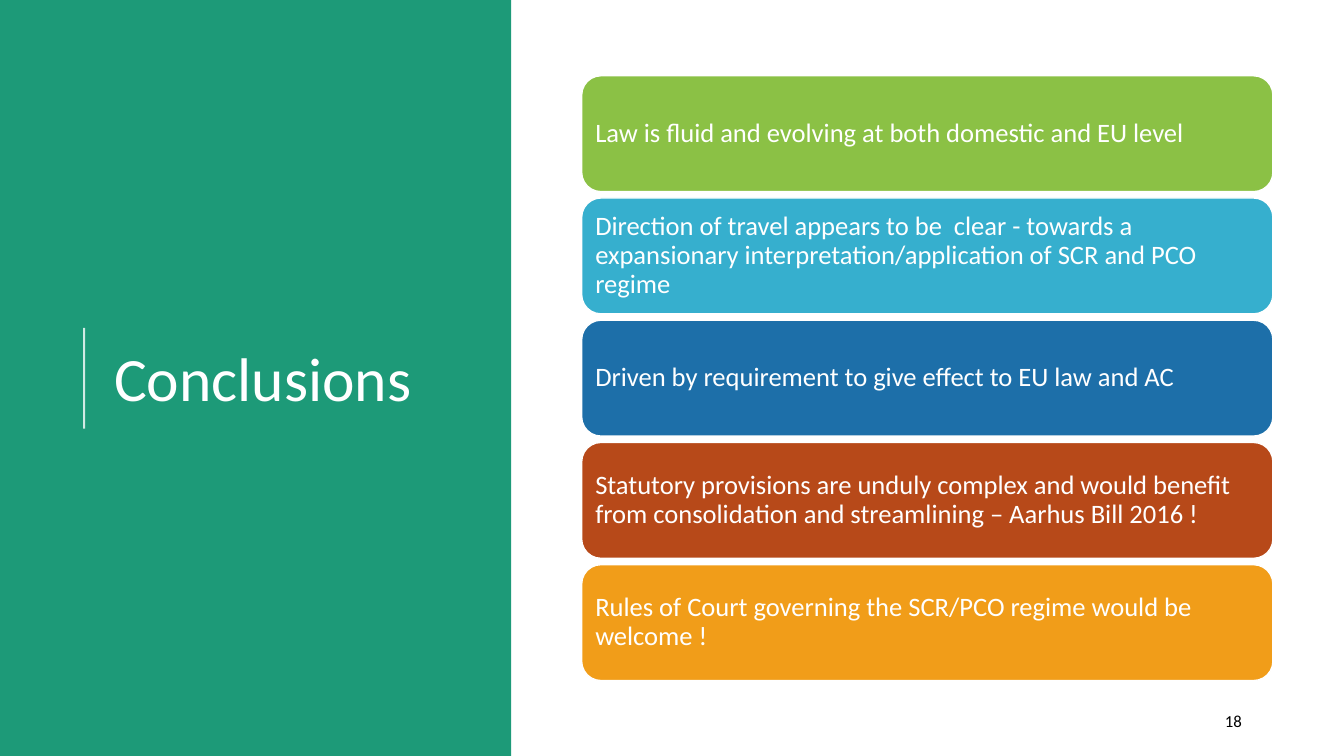
from dataclasses import dataclass

from lxml.etree import SubElement
from pptx import Presentation
from pptx.dml.color import RGBColor
from pptx.enum.shapes import MSO_CONNECTOR, MSO_SHAPE
from pptx.enum.text import MSO_ANCHOR, MSO_AUTO_SIZE, PP_ALIGN
from pptx.oxml.ns import qn
from pptx.slide import Slide
from pptx.text.text import TextFrame
from pptx.util import Cm, Pt

WHITE = RGBColor(0xFF, 0xFF, 0xFF)
BLACK = RGBColor(0x00, 0x00, 0x00)
TEAL = RGBColor(0x1D, 0x9A, 0x78)
GREEN = RGBColor(0x8B, 0xC1, 0x45)
SKY = RGBColor(0x36, 0xAF, 0xCE)
BLUE = RGBColor(0x1D, 0x6F, 0xA9)
RUST = RGBColor(0xB7, 0x49, 0x19)
AMBER = RGBColor(0xF1, 0x9D, 0x19)

FONT = "Calibri"
SLIDE_WIDTH, SLIDE_HEIGHT = Cm(33.87), Cm(19.05)
CARD_LEFT, CARD_TOP = Cm(14.66), Cm(1.91)
CARD_WIDTH, CARD_HEIGHT = Cm(17.42), Cm(2.92)
CARD_PITCH = Cm(3.08)
CARD_INSET = Cm(0.2)


@dataclass(frozen=True)
class Conclusion:
    text: str
    color: RGBColor


CONCLUSIONS = [
    Conclusion("Law is fluid and evolving at both domestic and EU level", GREEN),
    Conclusion("Direction of travel appears to be  clear - towards a expansionary "
               "interpretation/application of SCR and PCO regime", SKY),
    Conclusion("Driven by requirement to give effect to EU law and AC", BLUE),
    Conclusion("Statutory provisions are unduly complex and would benefit from "
               "consolidation and streamlining – Aarhus Bill 2016 !", RUST),
    Conclusion("Rules of Court governing the SCR/PCO regime would be welcome !", AMBER),
]


def write_text(frame: TextFrame, text: str, size: int, color: RGBColor,
               align: PP_ALIGN = PP_ALIGN.LEFT, line_spacing: float = 0.9) -> None:
    frame.word_wrap = True
    frame.auto_size = MSO_AUTO_SIZE.NONE
    frame.vertical_anchor = MSO_ANCHOR.MIDDLE
    para = frame.paragraphs[0]
    para.text = text
    para.alignment = align
    para.line_spacing = line_spacing
    para.font.name = FONT
    para.font.size = Pt(size)
    para.font.color.rgb = color


def add_title_panel(page: Slide) -> None:
    title = page.shapes.title
    title.left, title.top, title.width, title.height = Cm(2.62), Cm(1.98), Cm(9.37), Cm(15.29)
    write_text(title.text_frame, "Conclusions", 44, WHITE)

    panel = page.shapes.add_shape(MSO_SHAPE.RECTANGLE, 0, 0, Cm(12.88), SLIDE_HEIGHT)
    panel.shadow.inherit = False
    panel.fill.solid()
    panel.fill.fore_color.rgb = TEAL
    panel.line.fill.background()
    title.element.addprevious(panel.element)  # panel goes behind the title

    rule = page.shapes.add_connector(MSO_CONNECTOR.STRAIGHT, Cm(2.12), Cm(10.8), Cm(2.12), Cm(8.26))
    rule.line.color.rgb = WHITE
    rule.line.width = Pt(1.5)
    properties = rule.element.spPr
    SubElement(next(properties.iter(qn("a:srgbClr"))), qn("a:alpha"), val="80000")
    SubElement(properties, qn("a:effectLst"))


def add_card(page: Slide, row: int, conclusion: Conclusion) -> None:
    card = page.shapes.add_shape(MSO_SHAPE.ROUNDED_RECTANGLE, CARD_LEFT,
                                 CARD_TOP + row * CARD_PITCH, CARD_WIDTH, CARD_HEIGHT)
    card.shadow.inherit = False
    card.fill.solid()
    card.fill.fore_color.rgb = conclusion.color
    card.line.color.rgb = WHITE
    card.line.width = Pt(1)
    frame = card.text_frame
    frame.margin_left = frame.margin_right = CARD_INSET
    frame.margin_top = frame.margin_bottom = CARD_INSET
    write_text(frame, conclusion.text, 19, WHITE)


def add_page_number(page: Slide) -> None:
    box = page.shapes.add_textbox(Cm(23.93), Cm(17.65), Cm(7.62), Cm(1.02))
    write_text(box.text_frame, "18", 12, BLACK, PP_ALIGN.RIGHT, 1.0)


def main() -> None:
    deck = Presentation()
    deck.slide_width, deck.slide_height = SLIDE_WIDTH, SLIDE_HEIGHT
    page = deck.slides.add_slide(deck.slide_layouts.get_by_name("Title Only"))

    # Title side
    add_title_panel(page)

    # Page number
    add_page_number(page)

    # Stack of conclusions
    for row, conclusion in enumerate(CONCLUSIONS):
        add_card(page, row, conclusion)

    deck.save("out.pptx")


if __name__ == "__main__":
    main()
